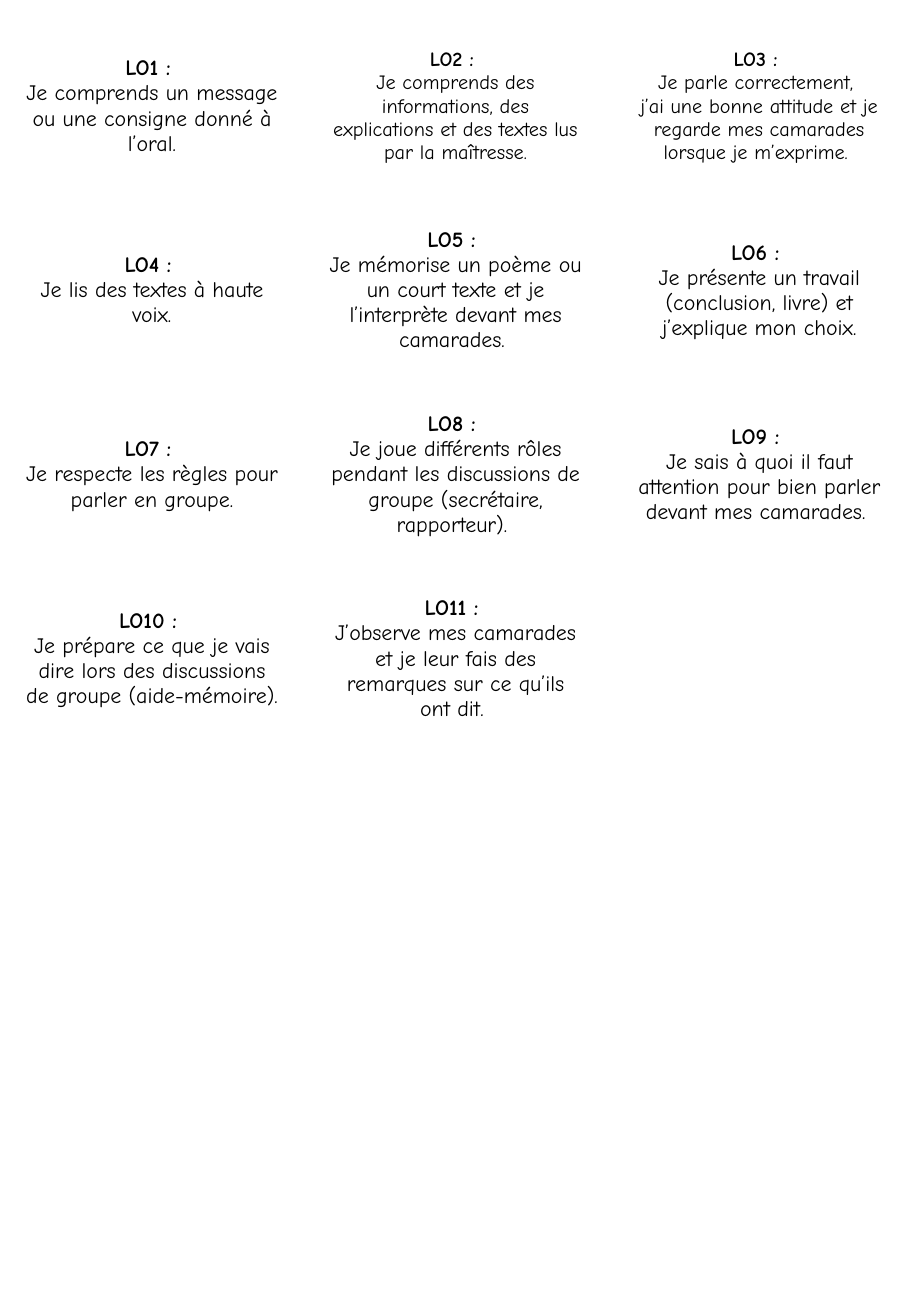
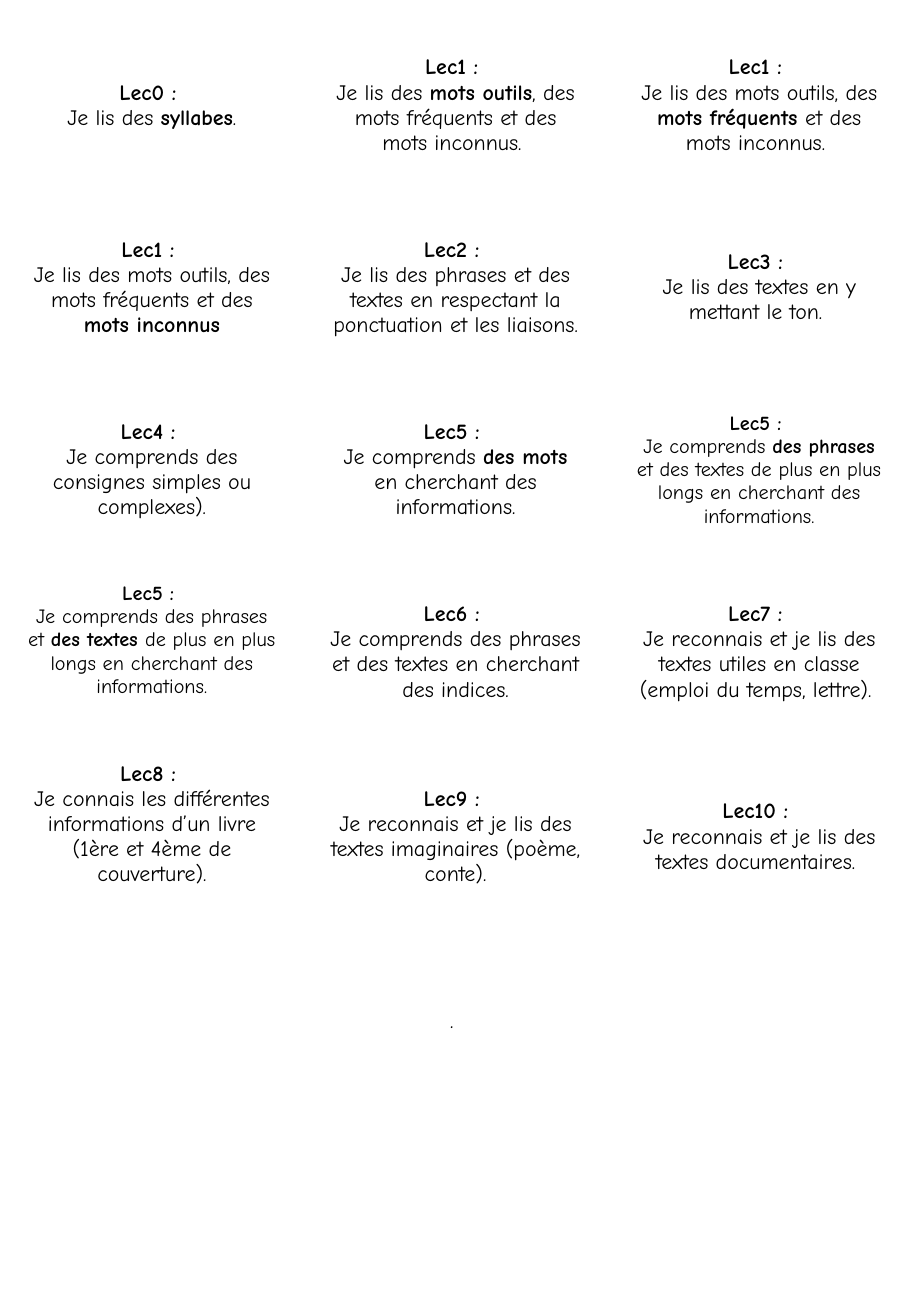
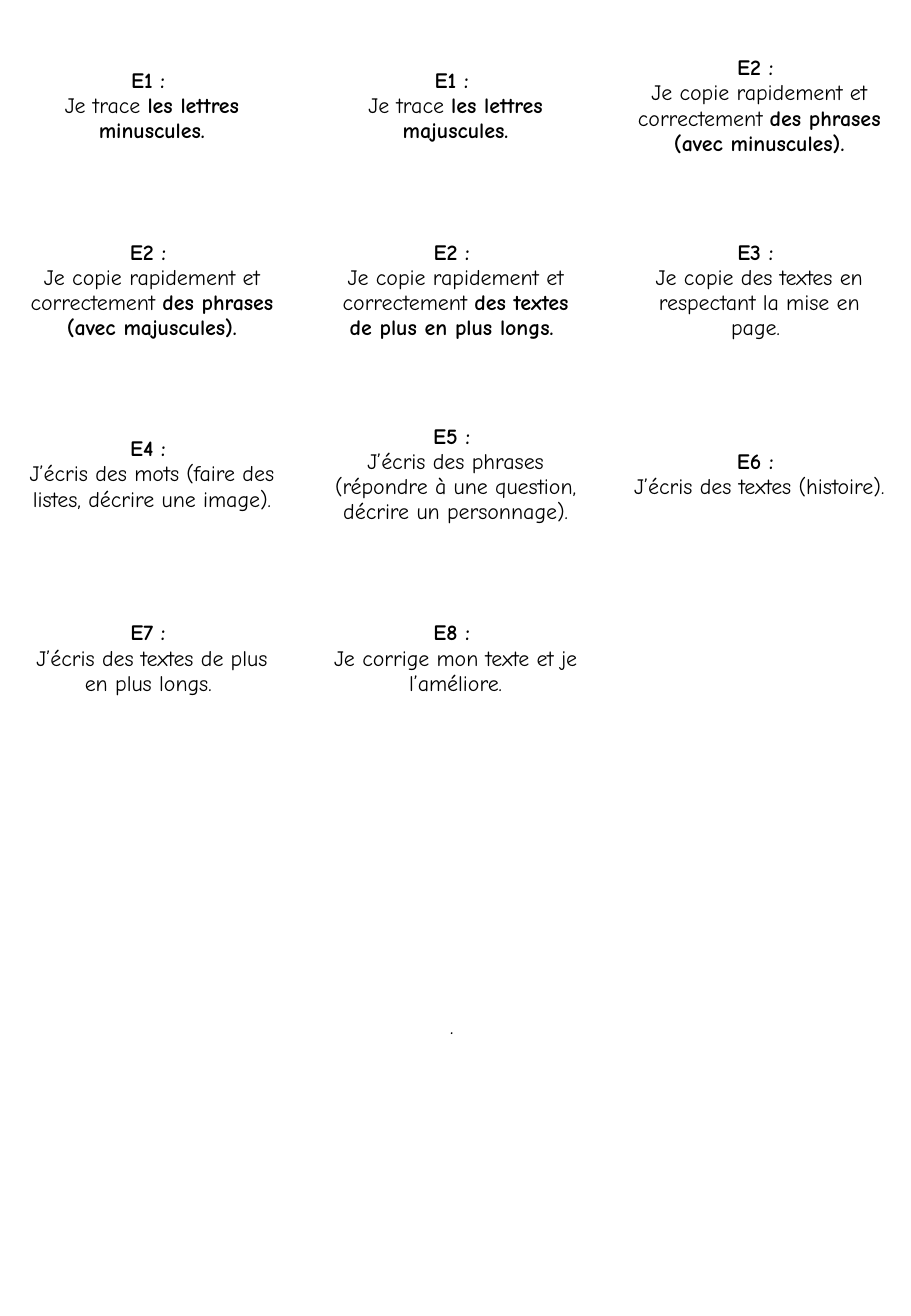
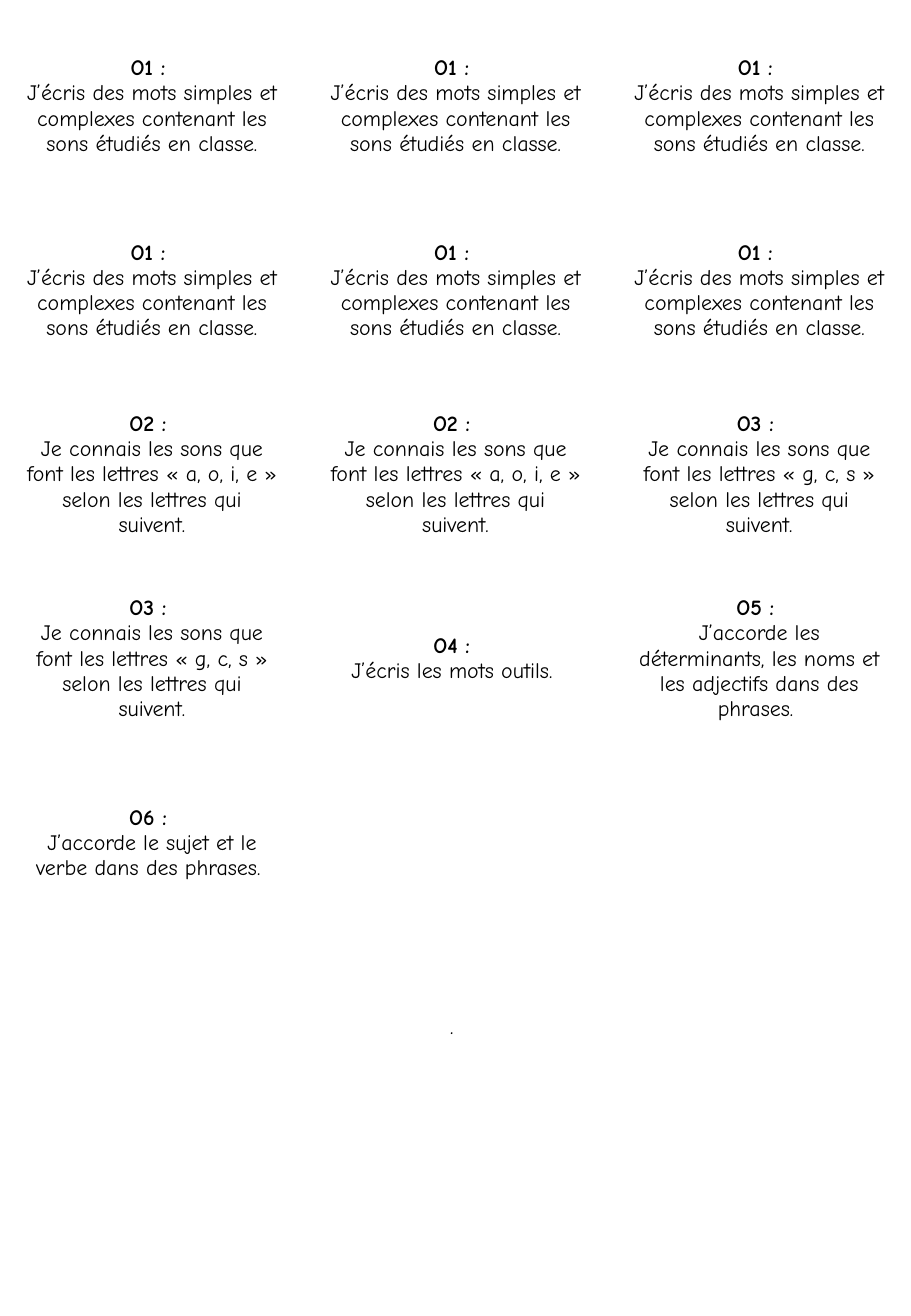
from dataclasses import dataclass

from pptx import Presentation
from pptx import util as u
from pptx.dml import color as c
from pptx.enum import text as t


@dataclass(frozen=True)
class Theme:
    font: str = "Comic Neue"
    ink: c.RGBColor = c.RGBColor(0, 0, 0)
    paper: c.RGBColor = c.RGBColor(255, 255, 255)
    size: int = 13
    small: int = 12


THEME = Theme()
WIDTH, HEIGHT = 19.05, 27.51
COLS, ROWS = 3, 7
TOP = 0.3
SIDE, EDGE = 0.53, 0.36
DOT_ROW, DOT_COL = 5, 1


@dataclass(frozen=True)
class Card:
    code: str
    text: str
    size: int = THEME.size
    lift: float = 0


class Deck:
    def __init__(self, theme):
        self.theme = theme
        self.prs = Presentation()
        self.prs.slide_width = u.Cm(WIDTH)
        self.prs.slide_height = u.Cm(HEIGHT)
        self.slide = None
        self.grid = None

    def page(self):
        self.slide = self.prs.slides.add_slide(self.prs.slide_layouts[6])

    def table(self, heights):
        frame = self.slide.shapes.add_table(
            ROWS, COLS, 0, u.Cm(TOP), u.Cm(WIDTH), u.Cm(sum(heights)))
        self.grid = frame.table
        self.grid.first_row = False
        self.grid.horz_banding = False
        for col in self.grid.columns:
            col.width = u.Cm(WIDTH / COLS)
        for row, height in zip(self.grid.rows, heights):
            row.height = u.Cm(height)
        for cell in self.grid.iter_cells():
            cell.fill.solid()
            cell.fill.fore_color.rgb = self.theme.paper
            cell.vertical_anchor = t.MSO_ANCHOR.MIDDLE
            cell.margin_left = cell.margin_right = u.Cm(SIDE)
            cell.margin_top = cell.margin_bottom = u.Cm(EDGE)

    def line(self, para, text, size, bold=False):
        para.alignment = t.PP_ALIGN.CENTER
        font = para.font
        font.name = self.theme.font
        font.size = u.Pt(size)
        font.color.rgb = self.theme.ink
        font.bold = bold
        for i, part in enumerate(text.split("*")):
            if part:
                run = para.add_run()
                run.text = part
                if i % 2:
                    run.font.bold = True

    def card(self, index, card):
        cell = self.grid.cell(*divmod(index, COLS))
        cell.margin_bottom = u.Cm(EDGE + card.lift)
        frame = cell.text_frame
        self.line(frame.paragraphs[0], f"{card.code} : ", card.size, True)
        for text in card.text.split("\n"):
            self.line(frame.add_paragraph(), text, card.size)

    def dot(self):
        cell = self.grid.cell(DOT_ROW, DOT_COL)
        self.line(cell.text_frame.paragraphs[0], ". ", self.theme.size)

    def sheet(self, cards, heights, dot):
        self.page()
        self.table(heights)
        for index, card in enumerate(cards):
            self.card(index, card)
        if dot:
            self.dot()


ORAL = [
    Card("LO1", "Je comprends un message ou une consigne donné à l’oral."),
    Card("LO2", "Je comprends des informations, des explications et des "
         "textes lus par la maîtresse.", THEME.small),
    Card("LO3", "Je parle correctement, \nj’ai une bonne attitude et je "
         "regarde mes camarades lorsque je m’exprime. ", THEME.small),
    Card("LO4", "Je lis des textes à haute voix."),
    Card("LO5", "Je mémorise un poème ou un court texte et je l’interprète "
         "devant mes camarades. "),
    Card("LO6", "Je présente un travail (conclusion, livre) et j’explique "
         "mon choix."),
    Card("LO7", "Je respecte les règles pour parler en groupe."),
    Card("LO8", "Je joue différents rôles pendant les discussions de groupe "
         "(secrétaire, rapporteur). "),
    Card("LO9", "Je sais à quoi il faut attention pour bien parler devant "
         "mes camarades. "),
    Card("LO10", "Je prépare ce que je vais dire lors des discussions de "
         "groupe (aide-mémoire). "),
    Card("LO11", "J’observe mes camarades et je leur fais des remarques sur "
         "ce qu’ils ont dit. "),
]

READ = [
    Card("Lec0", "Je lis des *syllabes*."),
    Card("Lec1", "Je lis des *mots outils*, des mots fréquents et des mots "
         "inconnus. "),
    Card("Lec1", "Je lis des mots outils, des *mots fréquents *et des mots "
         "inconnus. "),
    Card("Lec1", "Je lis des mots outils, des mots fréquents et des "
         "*mots inconnus*"),
    Card("Lec2", "Je lis des phrases et des textes en respectant la "
         "ponctuation et les liaisons."),
    Card("Lec3", "Je lis des textes en y mettant le ton. "),
    Card("Lec4", "Je comprends des consignes simples ou complexes)."),
    Card("Lec5", "Je comprends *des mots *en cherchant des informations."),
    Card("Lec5", "Je comprends *des phrases *et des textes de plus en plus "
         "longs en cherchant des informations.", THEME.small),
    Card("Lec5", "Je comprends des phrases et *des textes *de plus en plus "
         "longs en cherchant des informations.", THEME.small, 0.5),
    Card("Lec6", "Je comprends des phrases et des textes en cherchant des "
         "indices."),
    Card("Lec7", "Je reconnais et je lis des textes utiles en classe "
         "(emploi du temps, lettre). "),
    Card("Lec8", "Je connais les différentes informations d’un livre (1ère "
         "et 4ème de couverture).", lift=0.52),
    Card("Lec9", "Je reconnais et je lis des textes imaginaires (poème, "
         "conte)."),
    Card("Lec10", "Je reconnais et je lis des textes documentaires. "),
]

COPY = "Je copie rapidement et correctement "
WRITE = [
    Card("E1", "Je trace *les lettres minuscules.*"),
    Card("E1", "Je trace *les lettres majuscules.*"),
    Card("E2", COPY + "*des phrases (avec minuscules).*"),
    Card("E2", COPY + "*des phrases (avec majuscules).*"),
    Card("E2", COPY + "*des textes de plus en plus longs. *"),
    Card("E3", "Je copie des textes en respectant la mise en page. "),
    Card("E4", "J’écris des mots (faire des listes, décrire une image)."),
    Card("E5", "J’écris des phrases (répondre à une question, décrire un "
         "personnage)."),
    Card("E6", "J’écris des textes (histoire). "),
    Card("E7", "J’écris des textes de plus en plus longs. "),
    Card("E8", "Je corrige mon texte et je l’améliore."),
]

WORDS = Card("O1", "J’écris des mots simples et complexes contenant les sons "
             "étudiés en classe.")
SOUNDS = "Je connais les sons que font les lettres « {} » selon les lettres qui suivent."
VOWELS = Card("O2", SOUNDS.format("a, o, i, e"))
CONS = Card("O3", SOUNDS.format("g, c, s"))
SPELL = [WORDS] * 6 + [VOWELS] * 2 + [CONS] * 2 + [
    Card("O4", "J’écris les mots outils. "),
    Card("O5", "J’accorde les déterminants, les noms et les adjectifs dans "
         "des phrases. "),
    Card("O6", "J’accorde le sujet et le verbe dans des phrases. "),
]

EVEN = [3.85] * ROWS
TALL = [3.81] * 4 + [3.91] + [3.81] * 2


def main():
    deck = Deck(THEME)
    deck.sheet(ORAL, EVEN, False)
    deck.sheet(READ, TALL, True)
    deck.sheet(WRITE, EVEN, True)
    deck.sheet(SPELL, EVEN, True)
    deck.prs.save("out.pptx")


if __name__ == "__main__":
    main()
